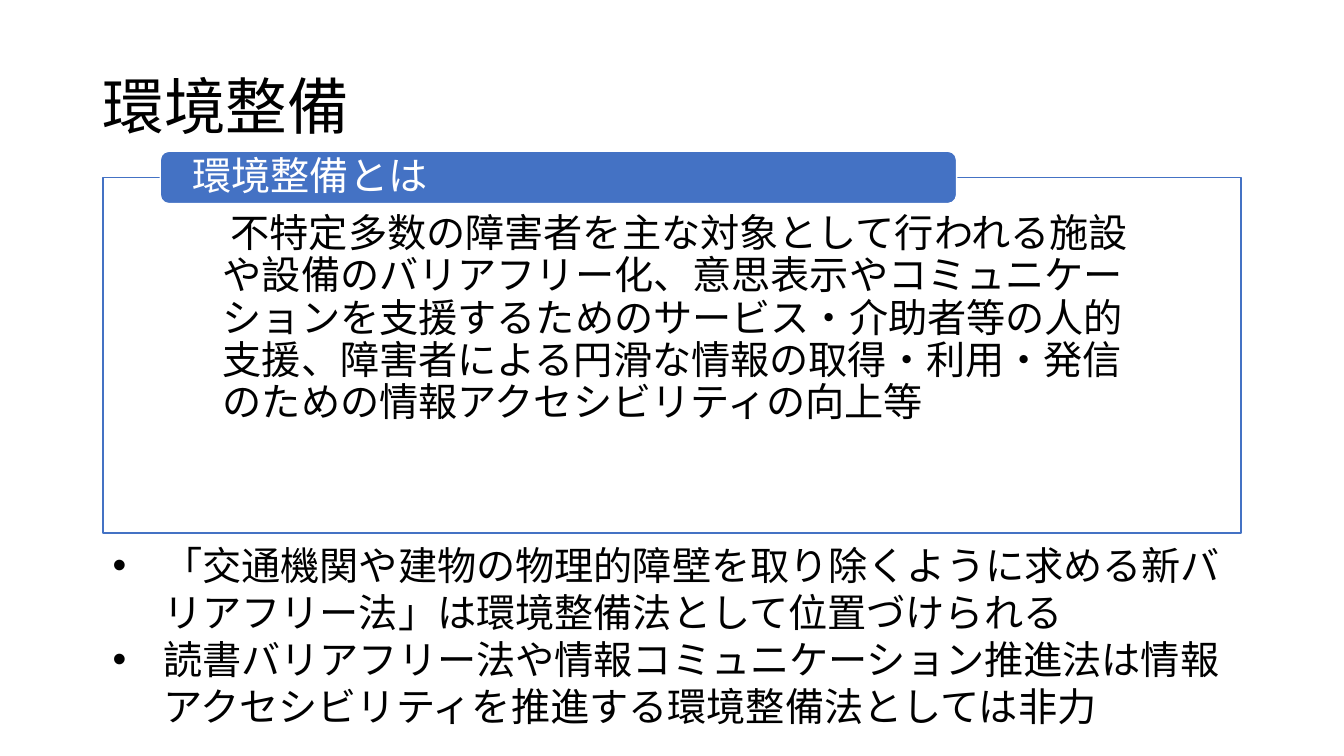
import pptx
import pptx.dml.color
import pptx.enum.shapes
import pptx.enum.text
import pptx.oxml.ns
import pptx.util
from lxml import etree

COLORS = {"ink": "000000", "paper": "FFFFFF", "accent": "4472C4"}
CELL = 0.1  # side of one grid cell, in inches
COLUMNS, ROWS = 133.33, 75


def cells(count):
    return pptx.util.Inches(count * CELL)


def rgb(name):
    return pptx.dml.color.RGBColor.from_string(COLORS[name])


def add_xml(parent, tag, **attributes):
    return etree.SubElement(parent, pptx.oxml.ns.qn(tag), **attributes)


class SlideBuilder:
    """Holds the style and the current slide; lengths are grid cells."""

    font = "Calibri"
    body_size = 28

    def __init__(self, presentation):
        self.slide = presentation.slides.add_slide(presentation.slide_layouts[6])

    def panel(self, box, kind, fill, line, opacity=100):
        panel = self.slide.shapes.add_shape(kind, *map(cells, box))
        panel.shadow.inherit = False
        panel.fill.solid()
        panel.fill.fore_color.rgb = rgb(fill)
        panel.line.color.rgb = rgb(line)
        panel.line.width = pptx.util.Pt(1)
        if opacity < 100:
            color = panel.fill._xPr.find(".//" + pptx.oxml.ns.qn("a:srgbClr"))
            add_xml(color, "a:alpha", val=str(opacity * 1000))

    def text(self, box, paragraphs, size=body_size, color="ink", spacing=1.0,
             insets=(1, 0.5, 1, 0.5), middle=False, margin=0, hanging=0,
             bullet=None):
        frame = self.slide.shapes.add_textbox(*map(cells, box)).text_frame
        frame.word_wrap = True
        anchors = pptx.enum.text.MSO_ANCHOR
        frame.vertical_anchor = anchors.MIDDLE if middle else anchors.TOP
        (frame.margin_left, frame.margin_top,
         frame.margin_right, frame.margin_bottom) = map(cells, insets)
        frame.text = "\n".join(paragraphs)
        for paragraph in frame.paragraphs:
            paragraph.line_spacing = spacing
            paragraph.font.name = self.font
            paragraph.font.size = pptx.util.Pt(size)
            paragraph.font.color.rgb = rgb(color)
            properties = paragraph._p.get_or_add_pPr()
            properties.set("marL", str(cells(margin)))
            properties.set("indent", str(-cells(hanging)))
            if bullet:
                defaults = properties.find(pptx.oxml.ns.qn("a:defRPr"))
                mark_font = add_xml(properties, "a:buFont", typeface="Arial")
                mark = add_xml(properties, "a:buChar", char=bullet)
                defaults.addprevious(mark_font)
                defaults.addprevious(mark)


def main():
    presentation = pptx.Presentation()
    presentation.slide_width = cells(COLUMNS)
    presentation.slide_height = cells(ROWS)
    builder = SlideBuilder(presentation)
    shapes = pptx.enum.shapes.MSO_SHAPE
    left, width = 10.2, 112.9

    # Title
    builder.text((9.2, 3.6, 115, 14.5), ["環境整備"], size=44, spacing=0.9,
                 middle=True)

    # Definition frame
    definition = (left, 17.6, width, 35.3)
    builder.panel(definition, shapes.RECTANGLE, "paper", "accent", opacity=90)
    builder.text(
        definition,
        ["\u3000不特定多数の障害者を主な対象として行われる施設や設備のバリアフリー化、"
         "意思表示やコミュニケーションを支援するためのサービス・介助者等の人的支援、"
         "障害者による円滑な情報の取得・利用・発信のための情報アクセシビリティの向上等"],
        spacing=0.9, insets=(8.8, 3.6, 8.8, 2.2), margin=3.1, hanging=3.1)

    # Heading on the frame's upper edge
    builder.panel((15.9, 15, 79, 5.2), shapes.ROUNDED_RECTANGLE, "accent", "paper")
    builder.text((16.1, 15.3, 78.5, 4.7), ["環境整備とは"], color="paper",
                 spacing=0.9, insets=(3, 0, 3, 0), middle=True)

    # Related laws
    builder.text(
        (left, 53.2, width, 19.9),
        ["「交通機関や建物の物理的障壁を取り除くように求める新バリアフリー法」は"
         "環境整備法として位置づけられる",
         "読書バリアフリー法や情報コミュニケーション推進法は情報アクセシビリティを"
         "推進する環境整備法としては非力"],
        margin=5, hanging=5, bullet="•")

    presentation.save("out.pptx")


if __name__ == "__main__":
    main()
